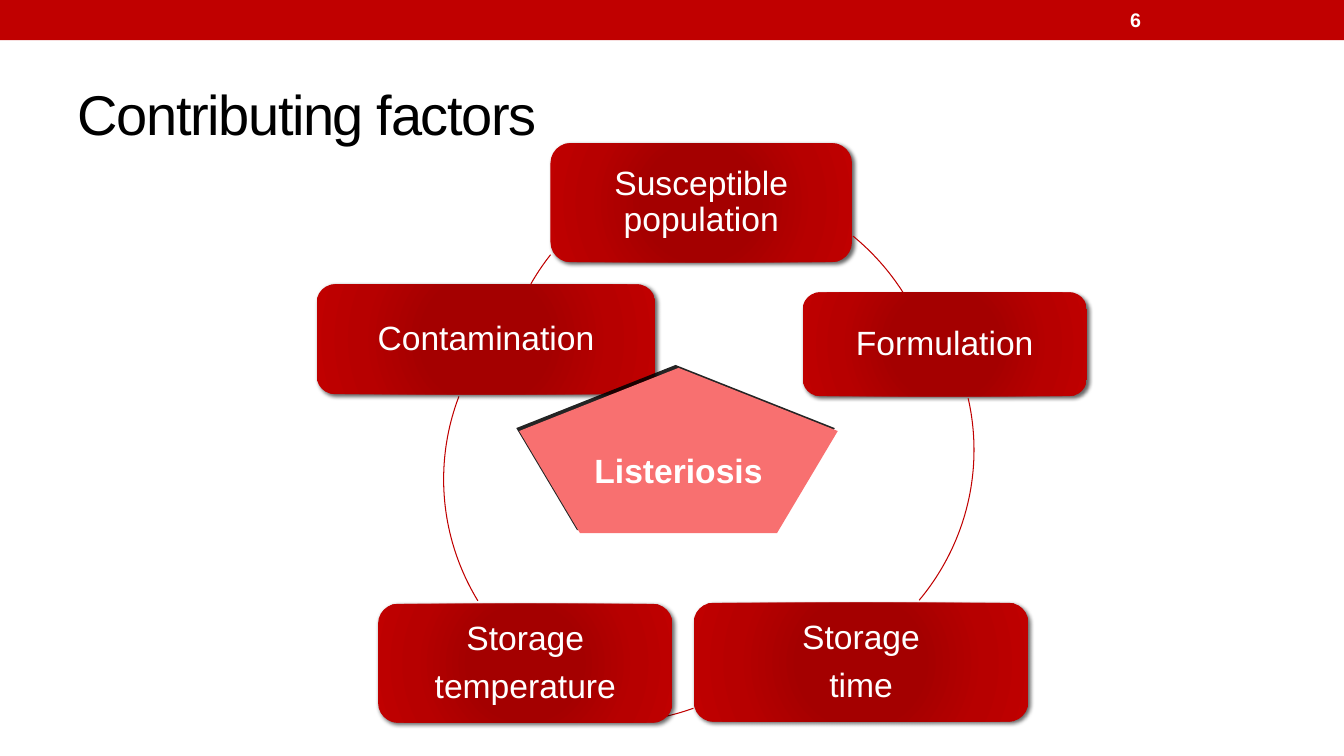
from dataclasses import dataclass

from lxml import etree
from pptx import Presentation
from pptx.dml.color import RGBColor
from pptx.enum.shapes import MSO_SHAPE as Preset
from pptx.enum.text import MSO_ANCHOR as Anchor, PP_ALIGN as Align
from pptx.oxml import parse_xml
from pptx.oxml.ns import nsdecls, qn
from pptx.util import Inches, Pt


@dataclass(frozen=True)
class Theme:
    font: str = "Arial"
    red: str = "C00000"
    pink: str = "F87070"
    black: str = "000000"
    white: str = "FFFFFF"
    factor_stops: tuple = ((0, "A40000"), (34, "A40000"), (70, "B70000"), (100, "C00000"))
    title_size: int = 40
    label_size: int = 24
    number_size: int = 14
    line_width: float = 0.75


THEME = Theme()

# Label, box (left, top, width, height)
FACTORS = [
    ("Susceptible population", (5.46, 1.42, 2.99, 1.18)),
    ("Formulation", (7.96, 2.9, 2.82, 1.03)),
    ("Storage\ntime", (6.88, 5.98, 3.32, 1.18)),
    ("Storage\ntemperature", (3.75, 5.99, 2.92, 1.18)),
    ("Contamination", (3.14, 2.82, 3.36, 1.09)),
]
# Left and top of the ring behind each link, then its start and end in degrees
LINKS = [
    (4.5, 1.79, 310.7, 328.7),
    (4.84, 2.11, 347.7, 38.6),
    (3.64, 2.46, 69.5, 78),
    (4.4, 2.4, 149.8, 200),
    (4.96, 1.61, 208.6, 217),
]
RING_SIZE = (4.82, 4.71)


def color(value):
    return RGBColor.from_string(value)


def add_preset(slide, preset, box):
    shape = slide.shapes.add_shape(preset, *map(Inches, box))
    shape.shadow.inherit = False
    shape.line.fill.background()
    return shape


def fill_solid(shape, value):
    shape.fill.solid()
    shape.fill.fore_color.rgb = color(value)


def draw_line(shape, value):
    shape.line.color.rgb = color(value)
    shape.line.width = Pt(THEME.line_width)


def fill_radial(shape, stops):
    """Fill with a circular gradient that runs from the centre outwards."""
    stop_xml = "".join(
        f'<a:gs pos="{position * 1000}"><a:srgbClr val="{value}"/></a:gs>'
        for position, value in stops
    )
    gradient = parse_xml(
        f'<a:gradFill {nsdecls("a")} rotWithShape="1"><a:gsLst>{stop_xml}</a:gsLst>'
        '<a:path path="circle"><a:fillToRect l="50000" t="50000" r="50000" b="50000"/>'
        "</a:path></a:gradFill>"
    )
    shape.fill.background()
    properties = shape.element.spPr
    properties.replace(properties.find(qn("a:noFill")), gradient)


def cast_shadow(shape, opacity, blur, distance, angle):
    effects = shape.element.spPr.find(qn("a:effectLst"))
    shadow = etree.SubElement(
        effects, qn("a:outerShdw"), blurRad=str(Pt(blur)), dist=str(Pt(distance)),
        dir=str(angle * 60000), algn="ctr", rotWithShape="0",
    )
    tint = etree.SubElement(shadow, qn("a:srgbClr"), val=THEME.black)
    etree.SubElement(tint, qn("a:alpha"), val=str(opacity * 1000))


def write(shape, text, size, value, align=Align.LEFT, bold=False):
    frame = shape.text_frame
    frame.text = text
    frame.word_wrap = True
    frame.vertical_anchor = Anchor.MIDDLE
    for paragraph in frame.paragraphs:
        paragraph.alignment = align
        for run in paragraph.runs:
            run.font.name = THEME.font
            run.font.size = Pt(size)
            run.font.bold = bold
            run.font.color.rgb = color(value)
    return frame


def add_banner(slide, box, number):
    left, top, width, height = box
    fill_solid(add_preset(slide, Preset.RECTANGLE, box), THEME.red)
    number_box = (left + width - 2.22, top + 0.02, 1.56, height - 0.04)
    page_number = slide.shapes.add_textbox(*map(Inches, number_box))
    write(page_number, number, THEME.number_size, THEME.white, bold=True)


def add_title(slide, box, text):
    title = slide.shapes.title
    title.left, title.top, title.width, title.height = map(Inches, box)
    frame = write(title, text, THEME.title_size, THEME.black)
    frame.paragraphs[0].runs[0].font._element.set("spc", "-100")


def add_factor(slide, box, label):
    factor = add_preset(slide, Preset.ROUNDED_RECTANGLE, box)
    fill_radial(factor, THEME.factor_stops)
    cast_shadow(factor, opacity=60, blur=3, distance=2, angle=45)
    frame = write(factor, label, THEME.label_size, THEME.white, Align.CENTER)
    for paragraph in frame.paragraphs:
        paragraph.line_spacing = 0.9
        paragraph.space_after = Pt(0.35 * THEME.label_size)


def add_link(slide, box, start, end):
    """Draw the part of the ellipse in box between two angles, clockwise."""
    link = add_preset(slide, Preset.ARC, box)
    link.fill.background()
    draw_line(link, THEME.red)
    # Angles are stored in 60000ths of a degree, adjustments in 100000ths
    for index, angle in enumerate((start, end)):
        link.adjustments[index] = angle * 0.6


def add_outcome(slide, box, label):
    outcome = add_preset(slide, Preset.REGULAR_PENTAGON, box)
    fill_solid(outcome, THEME.pink)
    cast_shadow(outcome, opacity=85, blur=0, distance=3, angle=225)
    write(outcome, label, THEME.label_size, THEME.white, Align.CENTER, bold=True)


def add_factor_cycle(slide):
    for (label, box), (left, top, start, end) in zip(FACTORS, LINKS):
        add_factor(slide, box, label)
        add_link(slide, (left, top, *RING_SIZE), start, end)
    add_outcome(slide, (5.15, 3.65, 3.16, 1.64), "Listeriosis")


def main():
    presentation = Presentation()
    presentation.slide_width = Inches(13.33)
    presentation.slide_height = Inches(7.5)
    slide = presentation.slides.add_slide(presentation.slide_layouts[5])
    add_banner(slide, (0, 0, 13.33, 0.4), "6")
    add_title(slide, (0.67, 0.58, 12, 1.08), "Contributing factors")
    add_factor_cycle(slide)
    presentation.save("out.pptx")


if __name__ == "__main__":
    main()
